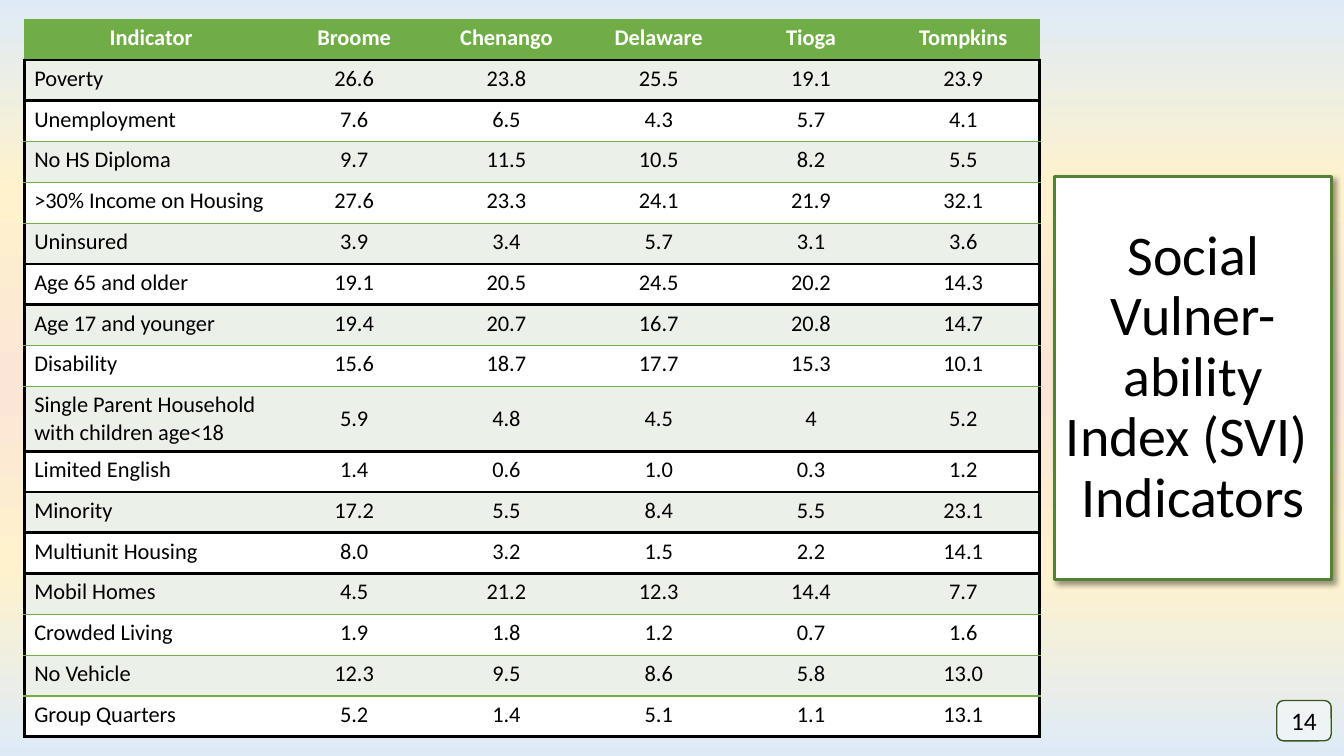
from dataclasses import dataclass
from lxml.etree import SubElement
from pptx import Presentation
from pptx.dml.color import RGBColor as RGB
from pptx.enum.shapes import MSO_SHAPE as SHAPE
from pptx.enum.text import MSO_ANCHOR as ANCHOR, MSO_AUTO_SIZE as FIT, PP_ALIGN as ALIGN
from pptx.oxml.ns import qn
from pptx.util import Inches, Pt


@dataclass(frozen=True)
class Theme:
    """Colours, font and type sizes of the slide."""
    font: str = "Calibri"
    black: str = "000000"
    white: str = "FFFFFF"
    green: str = "70AD47"
    band: str = "EBF1E9"
    frame: str = "548235"
    dark: str = "385723"
    sky: tuple = ((0, "DEEBF7"), (25, "FFF2CC"), (51, "FBE5D6"), (75, "FFF2CC"), (100, "DEEBF7"))
    title: int = 40
    body: int = 16
    number: int = 18
    thin: float = 1
    heavy: float = 2.25


T = Theme()
WIDTH, HEIGHT = 13.33, 7.5
TITLE = "Social\vVulner-\vability\vIndex (SVI) \vIndicators"
ROWS = (
    ("Indicator", "Broome", "Chenango", "Delaware", "Tioga", "Tompkins"),
    ("Poverty", "26.6", "23.8", "25.5", "19.1", "23.9"),
    ("Unemployment", "7.6", "6.5", "4.3", "5.7", "4.1"),
    ("No HS Diploma", "9.7", "11.5", "10.5", "8.2", "5.5"),
    (">30% Income on Housing", "27.6", "23.3", "24.1", "21.9", "32.1"),
    ("Uninsured", "3.9", "3.4", "5.7", "3.1", "3.6"),
    ("Age 65 and older", "19.1", "20.5", "24.5", "20.2", "14.3"),
    ("Age 17 and younger", "19.4", "20.7", "16.7", "20.8", "14.7"),
    ("Disability", "15.6", "18.7", "17.7", "15.3", "10.1"),
    ("Single Parent Household with children age<18", "5.9", "4.8", "4.5", "4", "5.2"),
    ("Limited English", "1.4", "0.6", "1.0", "0.3", "1.2"),
    ("Minority", "17.2", "5.5", "8.4", "5.5", "23.1"),
    ("Multiunit Housing", "8.0", "3.2", "1.5", "2.2", "14.1"),
    ("Mobil Homes", "4.5", "21.2", "12.3", "14.4", "7.7"),
    ("Crowded Living", "1.9", "1.8", "1.2", "0.7", "1.6"),
    ("No Vehicle", "12.3", "9.5", "8.6", "5.8", "13.0"),
    ("Group Quarters", "5.2", "1.4", "5.1", "1.1", "13.1"),
)
TALL_ROW, TALL_HEIGHT = 9, 0.64
HEAVY_BELOW = {0, 1, 5, 6, 9, 10, 11, 12, len(ROWS) - 1}
NO_GRID = "{2D5ABB26-0587-4C30-8999-92F81FD0307C}"


def add_xml(parent, tag, **attrs):
    """Append a DrawingML element and return it."""
    return SubElement(parent, qn(f"a:{tag}"), {k: str(v) for k, v in attrs.items()})


def format_text(p, size, color, align=ALIGN.CENTER, bold=False):
    """Set the alignment and font of a paragraph."""
    p.alignment = align
    p.font.name, p.font.size, p.font.bold = T.font, Pt(size), bold
    p.font.color.rgb = RGB.from_string(color)


def paint(sp, line, width):
    """Give a shape a white fill and a coloured outline."""
    sp.fill.solid()
    sp.fill.fore_color.rgb = RGB.from_string(T.white)
    sp.line.color.rgb = RGB.from_string(line)
    sp.line.width = Pt(width)


def add_background(s):
    """Fill the slide with the vertical sky gradient."""
    fill = s.background.fill
    fill.gradient()
    fill.gradient_angle = 270
    stops = s.element.find(f".//{qn('a:gsLst')}")
    for stop in list(stops):
        stops.remove(stop)
    for pos, color in T.sky:
        add_xml(add_xml(stops, "gs", pos=pos * 1000), "srgbClr", val=color)


def rule_below(i):
    """Return the colour and width of the line under row i."""
    return (T.black, T.heavy) if i in HEAVY_BELOW else (T.green, T.thin)


def add_borders(cell, i, j):
    """Draw the edges of the cell in row i and column j."""
    side = (T.black, T.heavy) if i else (T.green, T.thin)
    edges = {"lnL": side if j == 0 else None,
             "lnR": side if j == len(ROWS[0]) - 1 else None,
             "lnT": rule_below(i - 1),
             "lnB": rule_below(i)}
    tc_pr = cell._tc.get_or_add_tcPr()
    for tag, edge in edges.items():
        if edge:
            color, width = edge
            ln = add_xml(tc_pr, tag, w=Pt(width))
            add_xml(add_xml(ln, "solidFill"), "srgbClr", val=color)


def fill_cell(cell, i, j, text):
    """Write and style one table cell."""
    add_borders(cell, i, j)
    cell.fill.solid()
    color = (T.band if i % 2 else T.white) if i else T.green
    cell.fill.fore_color.rgb = RGB.from_string(color)
    cell.text = text
    if i == TALL_ROW and j:
        cell.vertical_anchor = ANCHOR.MIDDLE
    format_text(cell.text_frame.paragraphs[0], T.body, T.black if i else T.white,
                ALIGN.LEFT if i and j == 0 else ALIGN.CENTER, bold=i == 0)


def add_indicators(s, x, y, w, h):
    """Place the table of indicators by county in the box."""
    count = len(ROWS[0])
    table = s.shapes.add_table(len(ROWS), count, Inches(x), Inches(y), Inches(w), Inches(h)).table
    table._tbl.tblPr.find(qn("a:tableStyleId")).text = NO_GRID
    label = w / 4
    for j, col in enumerate(table.columns):
        col.width = Inches((w - label) / (count - 1) if j else label)
    for i, values in enumerate(ROWS):
        table.rows[i].height = Inches(
            TALL_HEIGHT if i == TALL_ROW else (h - TALL_HEIGHT) / (len(ROWS) - 1))
        for j, text in enumerate(values):
            fill_cell(table.cell(i, j), i, j, text)


def add_title(s, x, y, w, h):
    """Place the framed title with its shadow in the box."""
    sp = s.shapes.title
    sp.left, sp.top, sp.width, sp.height = map(Inches, (x, y, w, h))
    sp_pr = sp.element.spPr
    guides = add_xml(add_xml(sp_pr, "prstGeom", prst="roundRect"), "avLst")
    add_xml(guides, "gd", name="adj", fmla="val 0")
    paint(sp, T.frame, T.heavy)
    shadow = add_xml(add_xml(sp_pr, "effectLst"), "outerShdw", blurRad=Pt(4), dist=Pt(3),
                     dir=45 * 60000, algn="tl", rotWithShape=0)
    add_xml(add_xml(shadow, "srgbClr", val=T.black), "alpha", val=40000)
    tf = sp.text_frame
    tf.auto_size, tf.word_wrap, tf.vertical_anchor = FIT.NONE, True, ANCHOR.MIDDLE
    p = tf.paragraphs[0]
    p.text = TITLE
    p.line_spacing = 0.9
    format_text(p, T.title, T.black)


def add_number(s, x, y, w, h):
    """Place the slide number badge in the box."""
    sp = s.shapes.add_shape(SHAPE.ROUNDED_RECTANGLE, Inches(x), Inches(y), Inches(w), Inches(h))
    sp.shadow.inherit = False
    paint(sp, T.dark, T.thin)
    white = sp.element.spPr.find(f"{qn('a:solidFill')}/{qn('a:srgbClr')}")
    add_xml(white, "alpha", val=40000)
    tf = sp.text_frame
    tf.vertical_anchor = ANCHOR.MIDDLE
    tf.text = "14"
    format_text(tf.paragraphs[0], T.number, T.black)


def main():
    """Build the slide and save it."""
    prs = Presentation()
    prs.slide_width, prs.slide_height = Inches(WIDTH), Inches(HEIGHT)
    s = prs.slides.add_slide(prs.slide_layouts[5])
    add_background(s)
    add_number(s, 0.95 * WIDTH, 6.95, 0.54, 0.4)
    add_indicators(s, 0.24, 0.19, 10.07, 7.12)
    add_title(s, 10.46, 1.75, 2.75, 4)
    prs.save("out.pptx")


if __name__ == "__main__":
    main()
